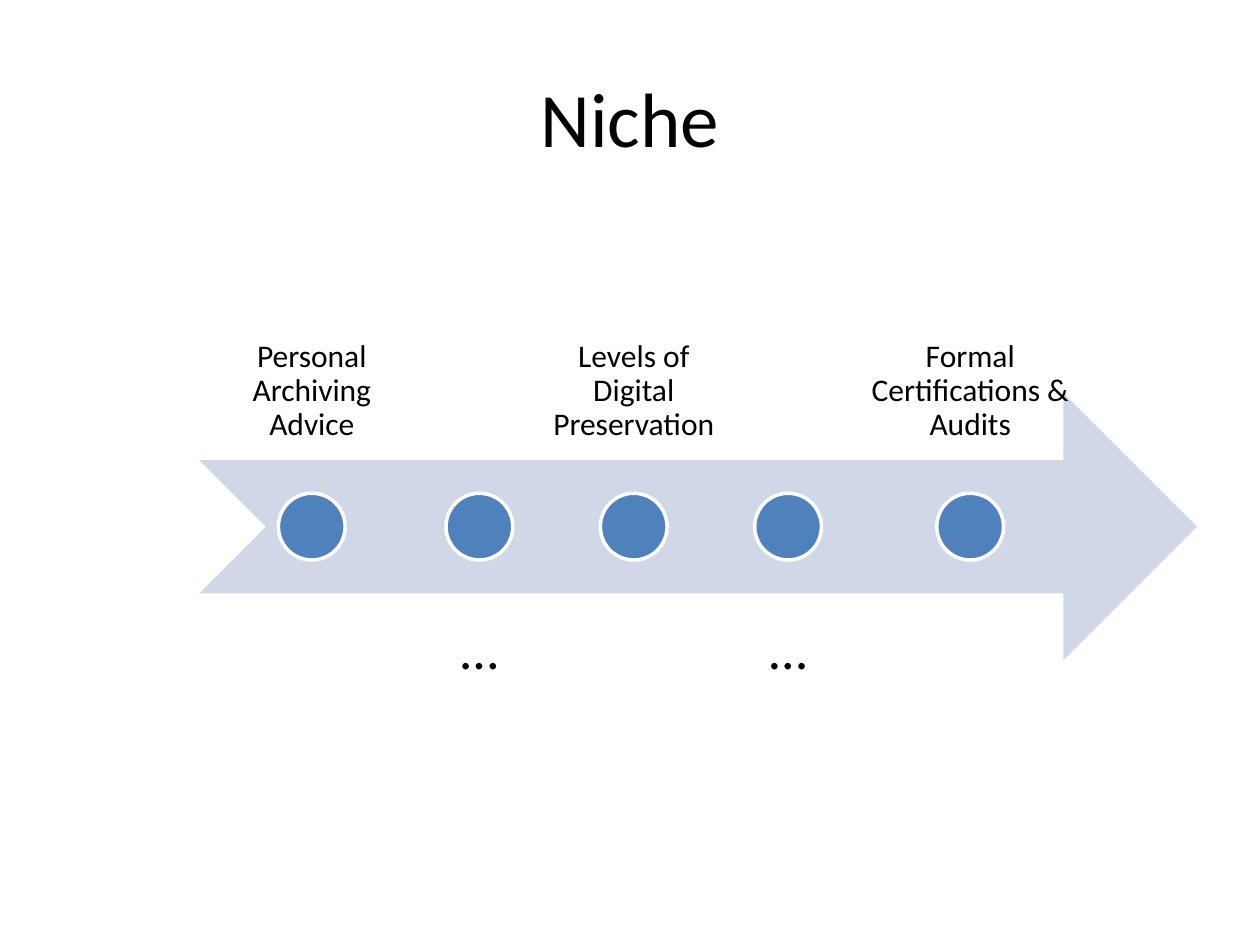
from pptx import Presentation
from pptx.dml.color import RGBColor
from pptx.enum import shapes, text
from pptx.util import Inches, Pt

BLACK = RGBColor(0x00, 0x00, 0x00)
WHITE = RGBColor(0xFF, 0xFF, 0xFF)
PALE_BLUE = RGBColor(0xD0, 0xD8, 0xE8)
BLUE = RGBColor(0x4F, 0x81, 0xBD)
FONT = "Calibri"

TITLE = "Niche"
# Milestone label and column width, from left to right
MILESTONES = [
    ("Personal Archiving Advice", 1.79),
    ("…", 0.79),
    ("Levels of Digital Preservation", 1.58),
    ("…", 0.79),
    ("Formal Certifications & Audits", 2.02),
]

ARROW_LEFT, ARROW_TOP, ARROW_WIDTH = 1.58, 3.12, 7.92
BAND = 2.12  # height of the arrow and of each label
ABOVE_TOP, BELOW_TOP = 1.53, 4.71
COLUMN_GAP = 0.04
DOT = 0.53

# Label style by position: top, anchor, inset, size
ABOVE = (ABOVE_TOP, text.MSO_ANCHOR.BOTTOM, 0.14, 18)
BELOW = (BELOW_TOP, text.MSO_ANCHOR.TOP, 0.24, 31)


def add_label(slide, words, left, top, width, height, anchor, inset, size,
              line_spacing=None):
    frame = slide.shapes.add_textbox(
        Inches(left), Inches(top), Inches(width), Inches(height)).text_frame
    frame.word_wrap = True
    frame.vertical_anchor = anchor
    frame.margin_left = frame.margin_right = Inches(inset)
    frame.margin_top = frame.margin_bottom = Inches(inset)
    frame.text = words
    paragraph = frame.paragraphs[0]
    paragraph.alignment = text.PP_ALIGN.CENTER
    paragraph.line_spacing = line_spacing
    font = paragraph.runs[0].font
    font.name, font.size, font.color.rgb = FONT, Pt(size), BLACK


def add_filled(slide, preset, left, top, width, height, fill):
    shape = slide.shapes.add_shape(
        preset, Inches(left), Inches(top), Inches(width), Inches(height))
    shape.shadow.inherit = False
    shape.fill.solid()
    shape.fill.fore_color.rgb = fill
    return shape


def main():
    deck = Presentation()
    deck.slide_width, deck.slide_height = Inches(10), Inches(7.5)
    slide = deck.slides.add_slide(deck.slide_layouts[6])

    # Title
    add_label(slide, TITLE, 0.5, 0.3, 9, 1.25, text.MSO_ANCHOR.MIDDLE, 0.05, 44)

    # Timeline arrow
    arrow = add_filled(slide, shapes.MSO_SHAPE.NOTCHED_RIGHT_ARROW,
                       ARROW_LEFT, ARROW_TOP, ARROW_WIDTH, BAND, PALE_BLUE)
    arrow.line.fill.background()

    # Milestones: labels alternate above and below, dots sit on the arrow's axis
    left = ARROW_LEFT
    dot_top = ARROW_TOP + (BAND - DOT) / 2
    for index, (words, width) in enumerate(MILESTONES):
        top, anchor, inset, size = BELOW if index % 2 else ABOVE
        add_label(slide, words, left, top, width, BAND, anchor, inset, size, 0.9)
        dot = add_filled(slide, shapes.MSO_SHAPE.OVAL,
                         left + (width - DOT) / 2, dot_top, DOT, DOT, BLUE)
        dot.line.color.rgb = WHITE
        dot.line.width = Pt(2)
        left += width + COLUMN_GAP

    deck.save("out.pptx")


if __name__ == "__main__":
    main()
